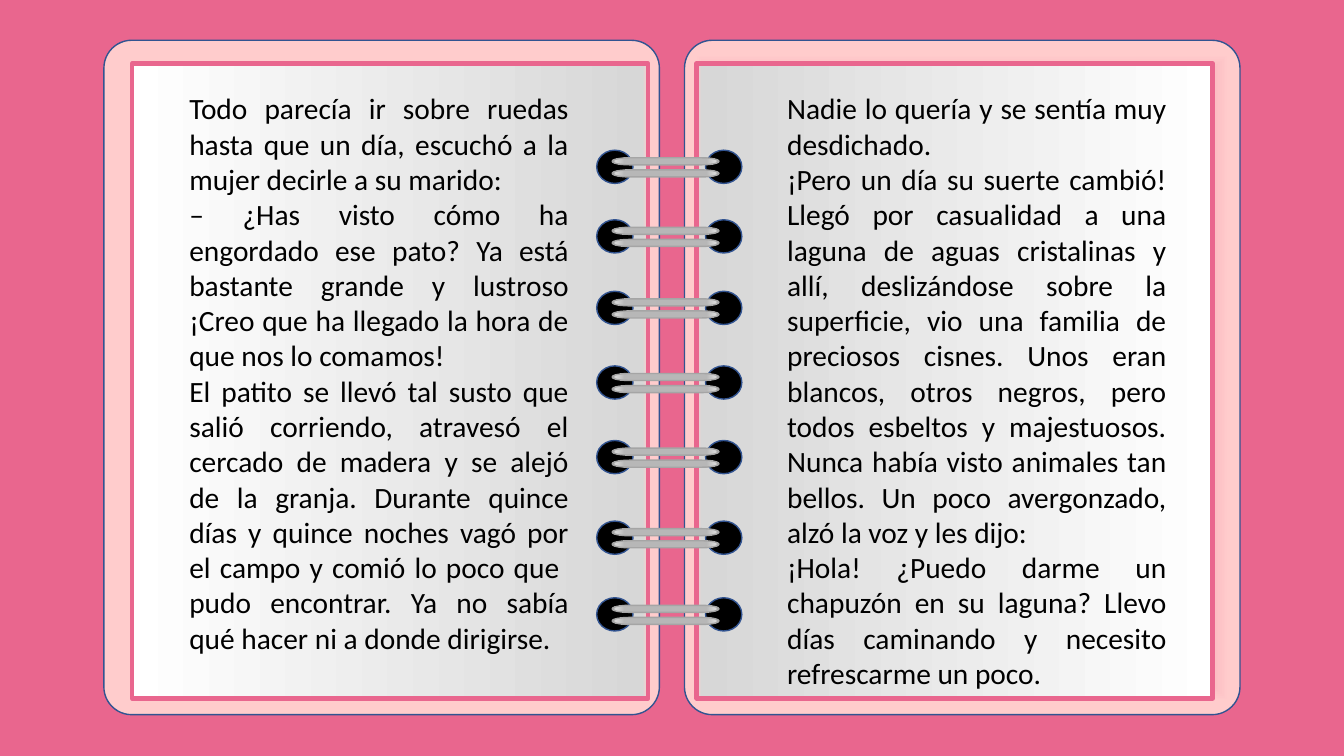
"""Build a storybook spread: two ring-bound pages with justified text."""
import pptx
import pptx.util
import pptx.dml.color
import pptx.enum.shapes
import pptx.enum.text
import pptx.oxml
import pptx.oxml.ns

deck = pptx.Presentation()
deck.slide_width = pptx.util.Inches(13.333)
deck.slide_height = pptx.util.Inches(7.5)
col = deck.slide_width / 100
row = deck.slide_height / 100
slide = deck.slides.add_slide(deck.slide_layouts[6])
kinds = pptx.enum.shapes.MSO_SHAPE


def tint(code):
    return pptx.dml.color.RGBColor.from_string(code)


def draw(home, kind, box, stops, shade, edge, width):
    left, top, wide, tall = box
    form = home.add_shape(kind, int(left * col), int(top * row), int(wide * col), int(tall * row))
    form.shadow.inherit = False
    form.line.color.rgb = tint(edge)
    form.line.width = pptx.util.Pt(width)
    if isinstance(stops, str):
        form.fill.solid()
        form.fill.fore_color.rgb = tint(stops)
        return form
    marks = "".join(
        f'<a:gs pos="{spot * 1000}"><a:srgbClr val="{code}"/></a:gs>' for spot, code in stops)
    if isinstance(shade, str):
        flow = (f'<a:path path="{shade}">'
                '<a:fillToRect l="50000" t="50000" r="50000" b="50000"/></a:path>')
    else:
        flow = f'<a:lin ang="{shade * 60000}" scaled="0"/>'
    form.fill.gradient()
    old = form.fill._xPr.find(pptx.oxml.ns.qn("a:gradFill"))
    new = pptx.oxml.parse_xml(
        f'<a:gradFill {pptx.oxml.ns.nsdecls("a")} rotWithShape="1">'
        f'<a:gsLst>{marks}</a:gsLst>{flow}</a:gradFill>')
    old.getparent().replace(old, new)
    return form


slide.background.fill.solid()
slide.background.fill.fore_color.rgb = tint("E9668E")

covers = [
    (7.73, [(65, "E9668E"), (80, "FFCCCC"), (100, "FFCCCC")]),
    (50.93, [(22, "FBF4BD"), (40, "E9668E"), (52, "FBF4BD"), (64, "E9668E"), (96, "FFCCCC")]),
]
for left, stops in covers:
    cover = draw(slide.shapes, kinds.ROUNDED_RECTANGLE, (left, 5.33, 41.33, 89.2),
                 stops, "shape", "325491", 1)
    cover.adjustments[0] = 0.05

paper = [(0, "FFCCCC"), (1, "D7D7D7"), (100, "FFFFFF")]
for left, angle in [(9.83, 180), (51.83, 0)]:
    draw(slide.shapes, kinds.RECTANGLE, (left, 8.4, 38.4, 84), paper, angle, "E9668E", 3)

metal = [(76, "B7B7B7"), (93, "D9D9D9"), (100, "808080")]
bind = 44.4
for top in [19.87, 29.07, 38.53, 48.4, 58.27, 68.93, 79.07]:
    ring = slide.shapes.add_group_shape().shapes
    for shift in [8.1, 0]:
        draw(ring, kinds.OVAL, (bind + shift, top, 2.7, 4.4), "000000", None, "325491", 1)
    for drop in [1, 2.6]:
        draw(ring, kinds.FLOWCHART_TERMINATOR, (bind + 1.15, top + drop, 7.95, 0.93),
             metal, "circle", "A5A5A5", 1)

tales = [
    (13.35, 81.47, [
        "Todo parecía ir sobre ruedas hasta que un día, escuchó a la mujer decirle a su marido:",
        "– ¿Has visto cómo ha engordado ese pato? Ya está bastante grande y lustroso "
        "¡Creo que ha llegado la hora de que nos lo comamos!",
        "El patito se llevó tal susto que salió corriendo, atravesó el cercado de madera "
        "y se alejó de la granja. Durante quince días y quince noches vagó por el campo "
        "y comió lo poco que  pudo encontrar. Ya no sabía qué hacer ni a donde dirigirse.",
    ]),
    (57.83, 88.6, [
        "Nadie lo quería y se sentía muy desdichado.",
        "¡Pero un día su suerte cambió! Llegó por casualidad a una laguna de aguas "
        "cristalinas y allí, deslizándose sobre la superficie, vio una familia de preciosos "
        "cisnes. Unos eran blancos, otros negros, pero todos esbeltos y majestuosos. Nunca "
        "había visto animales tan bellos. Un poco avergonzado, alzó la voz y les dijo:",
        "¡Hola! ¿Puedo darme un chapuzón en su laguna? Llevo días caminando y necesito "
        "refrescarme un poco.",
    ]),
]
for left, tall, lines in tales:
    box = slide.shapes.add_textbox(int(left * col), int(11.33 * row),
                                   int(29.7 * col), int(tall * row))
    frame = box.text_frame
    frame.word_wrap = True
    frame.auto_size = pptx.enum.text.MSO_AUTO_SIZE.SHAPE_TO_FIT_TEXT
    for index, line in enumerate(lines):
        para = frame.add_paragraph() if index else frame.paragraphs[0]
        para.alignment = pptx.enum.text.PP_ALIGN.JUSTIFY
        run = para.add_run()
        run.text = line
        run.font.name = "Calibri"
        run.font.size = pptx.util.Pt(21)
        run.font.color.rgb = tint("000000")

deck.save("out.pptx")
